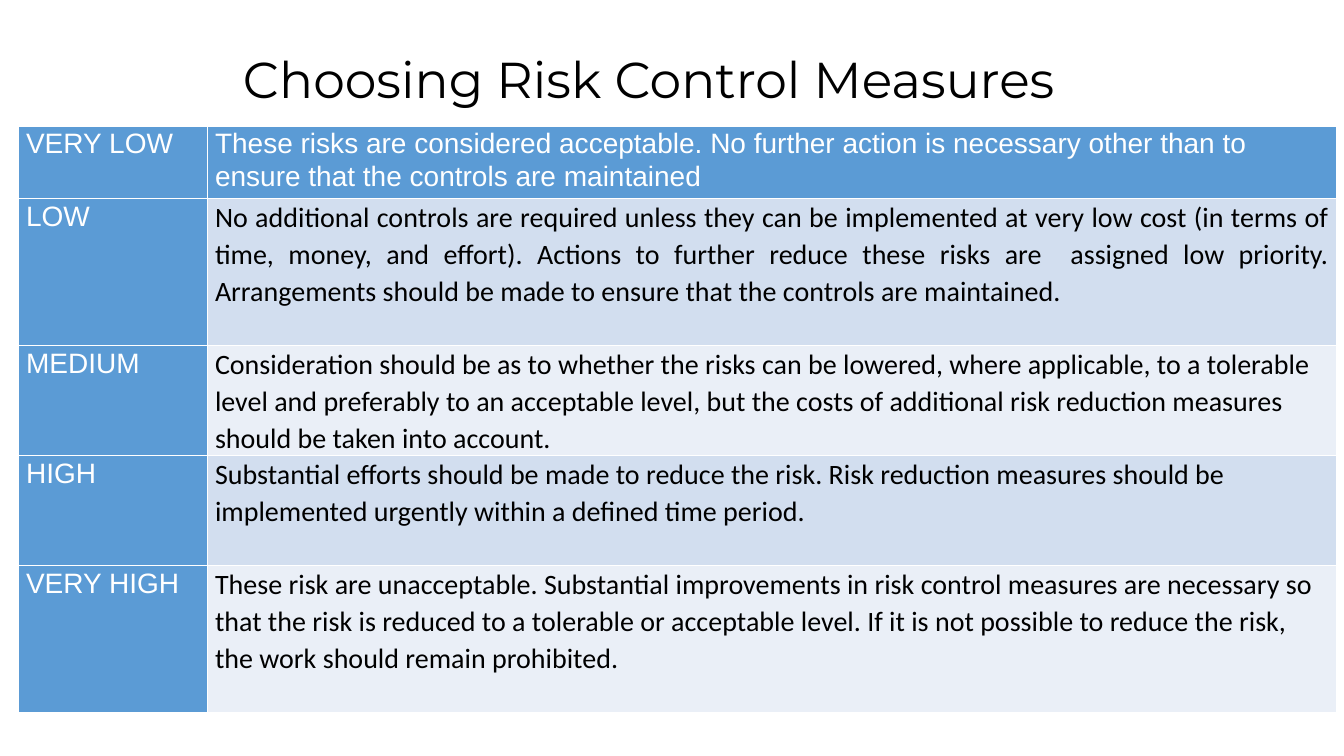
import pptx
import pptx.dml.color
import pptx.enum.text
import pptx.oxml
import pptx.oxml.ns
import pptx.util

Pt = pptx.util.Pt
ALIGN = pptx.enum.text.PP_ALIGN
ANCHOR = pptx.enum.text.MSO_ANCHOR

COLORS = {
    "black": "000000",
    "white": "FFFFFF",
    "level": "5B9BD5",
    "band_dark": "D2DEEF",
    "band_light": "EAEFF7",
}

RISKS = [
    ("VERY LOW", 52,
     "These risks are considered acceptable. No further action is necessary "
     "other than to ensure that the controls are maintained"),
    ("LOW", 105,
     "No additional controls are required unless they can be implemented at "
     "very low cost (in terms of time, money, and effort). Actions to further "
     "reduce these risks are  assigned low priority. Arrangements should be "
     "made to ensure that the controls are maintained."),
    ("MEDIUM", 78.5,
     "Consideration should be as to whether the risks can be lowered, where "
     "applicable, to a tolerable level and preferably to an acceptable level, "
     "but the costs of additional risk reduction measures should be taken "
     "into account."),
    ("HIGH", 78.5,
     "Substantial efforts should be made to reduce the risk. Risk reduction "
     "measures should be implemented urgently within a defined time period."),
    ("VERY HIGH", 105,
     "These risk are unacceptable. Substantial improvements in risk control "
     "measures are necessary so that the risk is reduced to a tolerable or "
     "acceptable level. If it is not possible to reduce the risk, the work "
     "should remain prohibited."),
]


def rgb(name):
    return pptx.dml.color.RGBColor.from_string(COLORS[name])


def write(tf, text, font="Arial", size=20, color="white", align=ALIGN.LEFT, spacing=1.07):
    p = tf.paragraphs[0]
    p.alignment = align
    p.line_spacing = spacing
    p.space_before = p.space_after = Pt(0)
    r = p.add_run()
    r.text = text
    r.font.name = font
    r.font.size = Pt(size)
    r.font.bold = False
    r.font.color.rgb = rgb(color)


def set_borders(cell, color="white", width=1):
    tc_pr = cell._tc.get_or_add_tcPr()
    for i, side in enumerate(("lnL", "lnR", "lnT", "lnB")):
        ln = pptx.oxml.parse_xml(
            f'<a:{side} {pptx.oxml.ns.nsdecls("a")} w="{Pt(width)}"><a:solidFill>'
            f'<a:srgbClr val="{COLORS[color]}"/></a:solidFill></a:{side}>')
        tc_pr.insert(i, ln)


def fill_cell(cell, text, fill, **style):
    cell.margin_left = cell.margin_right = Pt(5.4)
    cell.margin_top = cell.margin_bottom = Pt(0)
    cell.vertical_anchor = ANCHOR.TOP
    cell.fill.solid()
    cell.fill.fore_color.rgb = rgb(fill)
    set_borders(cell)
    write(cell.text_frame, text, **style)


def add_title(s, text):
    sp = s.shapes.title
    sp.left, sp.top, sp.width, sp.height = Pt(103.5), Pt(21), Pt(720), Pt(61)
    tf = sp.text_frame
    tf.word_wrap = True
    tf.vertical_anchor = ANCHOR.BOTTOM
    write(tf, text, font="Montserrat", size=36, color="black",
          align=ALIGN.CENTER, spacing=0.9)


def add_risk_table(s):
    widths = (135, 806.5)
    height = sum(row[1] for row in RISKS)
    table = s.shapes.add_table(len(RISKS), len(widths), Pt(13.2), Pt(90),
                               Pt(sum(widths)), Pt(height)).table
    table.first_row = table.horz_banding = False
    for col, width in zip(table.columns, widths):
        col.width = Pt(width)
    for i, (level, row_height, action) in enumerate(RISKS):
        table.rows[i].height = Pt(row_height)
        fill_cell(table.cell(i, 0), level, "level")
        if i == 0:
            fill_cell(table.cell(i, 1), action, "level")
        else:
            fill_cell(table.cell(i, 1), action,
                      "band_dark" if i % 2 else "band_light",
                      font="Calibri", color="black",
                      align=ALIGN.JUSTIFY if level == "LOW" else ALIGN.LEFT)


def main():
    prs = pptx.Presentation()
    prs.slide_width, prs.slide_height = Pt(960), Pt(540)
    s = prs.slides.add_slide(prs.slide_layouts[0])
    subtitle = s.placeholders[1].element
    subtitle.getparent().remove(subtitle)
    add_title(s, "Choosing Risk Control Measures")
    add_risk_table(s)
    prs.save("out.pptx")


if __name__ == "__main__":
    main()
